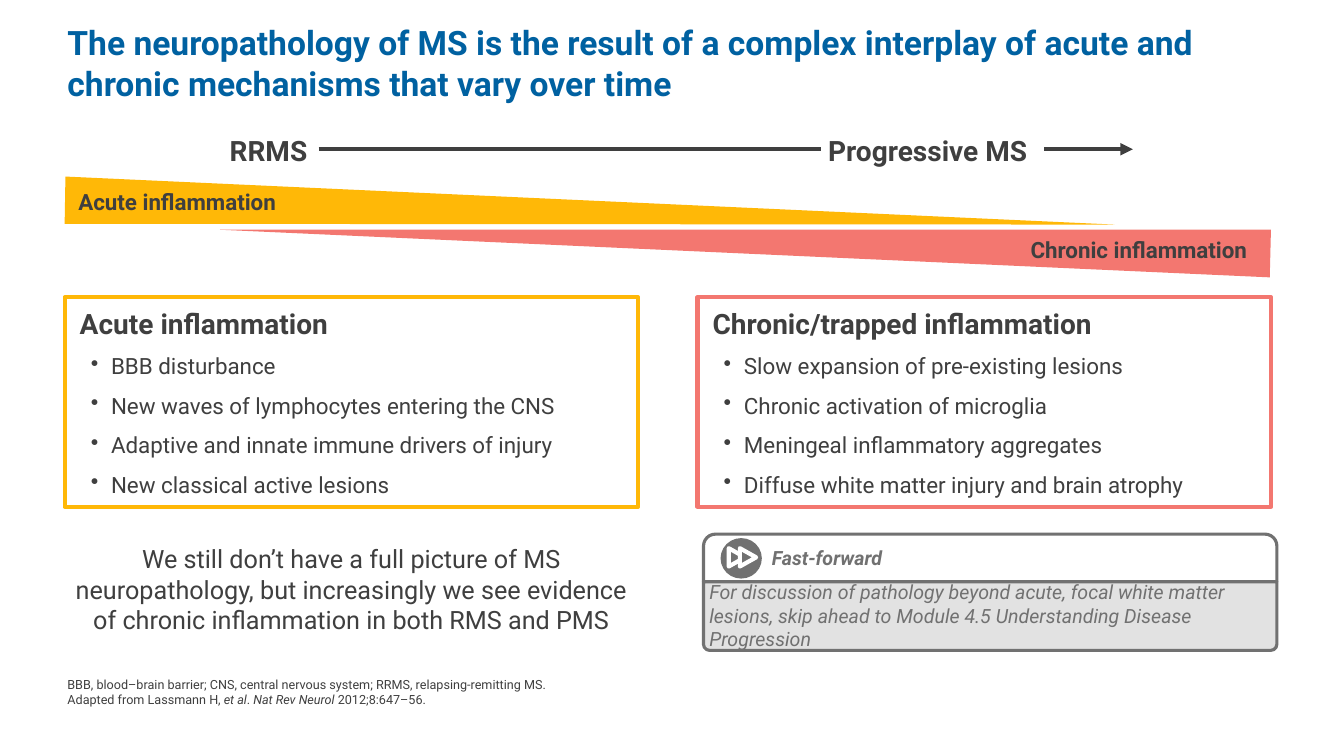
from lxml import etree
from pptx import Presentation
from pptx import util as u
from pptx.dml.color import RGBColor
from pptx.enum import shapes, text
from pptx.oxml.ns import qn

HUES = {
    "blue": "0061A1",
    "ink": "3F3F3F",
    "gold": "FFB807",
    "coral": "F37770",
    "gray": "717171",
    "pale": "E2E2E2",
    "white": "FFFFFF",
}
FONT = "Roboto"
LEFT, WIDE = 1.63, 14.45
KIND = shapes.MSO_SHAPE
ALIGN = text.PP_ALIGN
ANCHOR = text.MSO_ANCHOR

ACUTE = [
    "BBB disturbance",
    "New waves of lymphocytes entering the CNS",
    "Adaptive and innate immune drivers of injury",
    "New classical active lesions",
]
CHRONIC = [
    "Slow expansion of pre-existing lesions",
    "Chronic activation of microglia",
    "Meningeal inflammatory aggregates",
    "Diffuse white matter injury and brain atrophy",
]


def hue(name):
    return RGBColor.from_string(HUES[name])


def paint(shape, fill=None, line=None, width=3):
    shape.shadow.inherit = False
    if fill:
        shape.fill.solid()
        shape.fill.fore_color.rgb = hue(fill)
    else:
        shape.fill.background()
    if line:
        shape.line.color.rgb = hue(line)
        shape.line.width = u.Pt(width)
    else:
        shape.line.fill.background()


def frame(shape, anchor=ANCHOR.TOP, inset=(0.25, 0.13, 0.25, 0.13), wrap=True):
    """Set up a text frame; inset is left, top, right, bottom."""
    body = shape.text_frame
    body.word_wrap = wrap
    body.vertical_anchor = anchor
    (body.margin_left, body.margin_top,
     body.margin_right, body.margin_bottom) = map(u.Cm, inset)
    return body


def write(body, words, size=16, color="ink", bold=False, italic=False,
          align=ALIGN.LEFT, before=0, after=0, bullet=False):
    """Add one paragraph; each asterisk in words toggles italics."""
    para = body.paragraphs[0]
    if para.runs:
        para = body.add_paragraph()
    para.alignment = align
    para.space_before = u.Pt(before)
    para.space_after = u.Pt(after)
    if bullet:
        props = para._p.get_or_add_pPr()
        props.set("marL", str(u.Cm(0.79)))
        props.set("indent", str(u.Cm(-0.51)))
        etree.SubElement(props, qn("a:buChar"), char="•")
    for i, part in enumerate(words.split("*")):
        run = para.add_run()
        run.text = part
        font = run.font
        font.name = FONT
        font.size = u.Pt(size)
        font.bold = bold
        font.italic = italic != (i % 2 == 1)
        font.color.rgb = hue(color)


def label(slide, words, box, anchor=ANCHOR.TOP,
          inset=(0.25, 0.13, 0.25, 0.13), wrap=True, **style):
    """Add a text box with one paragraph per line of words."""
    shape = slide.shapes.add_textbox(*map(u.Cm, box))
    body = frame(shape, anchor, inset, wrap)
    for line in words.split("\n"):
        write(body, line, **style)


def block(slide, kind, box, turn=0, adjust=(), **look):
    shape = slide.shapes.add_shape(kind, *map(u.Cm, box))
    shape.rotation = turn
    for i, value in enumerate(adjust):
        shape.adjustments[i] = value
    paint(shape, **look)
    return shape


def panel(slide, left, color, head, items):
    shape = block(slide, KIND.RECTANGLE, (left, 7.49, WIDE, 5.28), line=color)
    body = frame(shape, inset=(0.38, 0.23, 0.38, 0.23))
    write(body, head, size=20, bold=True, after=3)
    for item in items:
        write(body, item, before=6, after=3, bullet=True)


def wedge(slide, color, points):
    start, *rest = [(u.Cm(x), u.Cm(y)) for x, y in points]
    path = slide.shapes.build_freeform(*start)
    path.add_line_segments(rest, close=True)
    paint(path.convert_to_shape(), fill=color)


def rule(slide, start, end, arrow=False):
    y = u.Cm(3.76)
    line = slide.shapes.add_connector(
        shapes.MSO_CONNECTOR.STRAIGHT, u.Cm(start), y, u.Cm(end), y)
    line.line.color.rgb = hue("ink")
    line.line.width = u.Pt(3)
    if arrow:
        etree.SubElement(line.line._get_or_add_ln(), qn("a:tailEnd"),
                         type="triangle")
    etree.SubElement(line._element.spPr, qn("a:effectLst"))


def course(slide):
    """Draw the time line from RRMS to progressive MS and its two wedges."""
    for words, left, width in (("RRMS", 5.54, 2.59),
                               ("Progressive MS", 20.62, 5.87)):
        label(slide, words, (left, 3.23, width, 1.12), wrap=False,
              size=20, bold=True)
    rule(slide, 8.03, 20.68)
    rule(slide, 26.31, 28.55, arrow=True)
    wedge(slide, "coral", [(32, 6.99), (32.03, 5.79), (5.54, 5.79)])
    wedge(slide, "gold", [(1.65, 4.45), (1.63, 5.64), (28.09, 5.66)])
    label(slide, "Acute inflammation", (1.47, 4.62, 5.99, 0.94),
          bold=True, align=ALIGN.CENTER)
    label(slide, "Chronic inflammation", (25.2, 5.82, 6.48, 0.94),
          bold=True, align=ALIGN.RIGHT)


def forward(slide):
    """Draw the fast-forward card."""
    left, seam = 17.73, 14.66
    edge = {"line": "gray", "width": 2.25}
    block(slide, KIND.ROUND_2_SAME_RECTANGLE, (left, 13.46, WIDE, 1.2),
          adjust=(0.25, 0), fill="white", **edge)
    note = block(slide, KIND.ROUND_2_SAME_RECTANGLE, (left, seam, WIDE, 1.73),
                 adjust=(0, 0.09), fill="pale", **edge)
    write(frame(note, ANCHOR.MIDDLE, (0.1,) * 4),
          "For discussion of pathology beyond acute, focal white matter "
          "lesions, skip ahead to Module 4.5 Understanding Disease Progression",
          size=14, color="gray", italic=True)
    block(slide, KIND.OVAL, (18.16, 13.56, 1.04, 1.02), fill="gray")
    for x in (18.34, 18.62):
        block(slide, KIND.ISOSCELES_TRIANGLE, (x, 13.84, 0.46, 0.41), turn=90,
              fill="gray", line="white")
    label(slide, "Fast-forward", (19.2, 13.31, 5.94, 1.5), ANCHOR.MIDDLE,
          size=14, color="gray", bold=True, italic=True)


def main():
    deck = Presentation()
    deck.slide_width, deck.slide_height = u.Cm(33.87), u.Cm(19.05)
    slide = deck.slides.add_slide(deck.slide_layouts[6])
    flush = (0, 0.13, 0.25, 0.13)
    label(slide, "The neuropathology of MS is the result of a complex "
          "interplay of acute and chronic mechanisms that vary over time",
          (1.7, 0.43, 30.48, 2.29), ANCHOR.BOTTOM, flush,
          size=24, color="blue", bold=True)
    label(slide, "BBB, blood–brain barrier; CNS, central nervous system; "
          "RRMS, relapsing-remitting MS.\n"
          "Adapted from Lassmann H, *et al*.* Nat Rev Neurol *2012;8:647–56.",
          (1.7, 16.92, 25.04, 1.3), inset=flush, size=9)
    panel(slide, LEFT, "gold", "Acute inflammation", ACUTE)
    panel(slide, 17.58, "coral", "Chronic/trapped inflammation", CHRONIC)
    course(slide)
    label(slide, "We still don’t have a full picture of MS neuropathology, "
          "but increasingly we see evidence of chronic inflammation in both "
          "RMS and PMS", (LEFT, 13.51, WIDE, 2.67), ANCHOR.MIDDLE,
          size=18, align=ALIGN.CENTER)
    forward(slide)
    deck.save("out.pptx")


if __name__ == "__main__":
    main()
